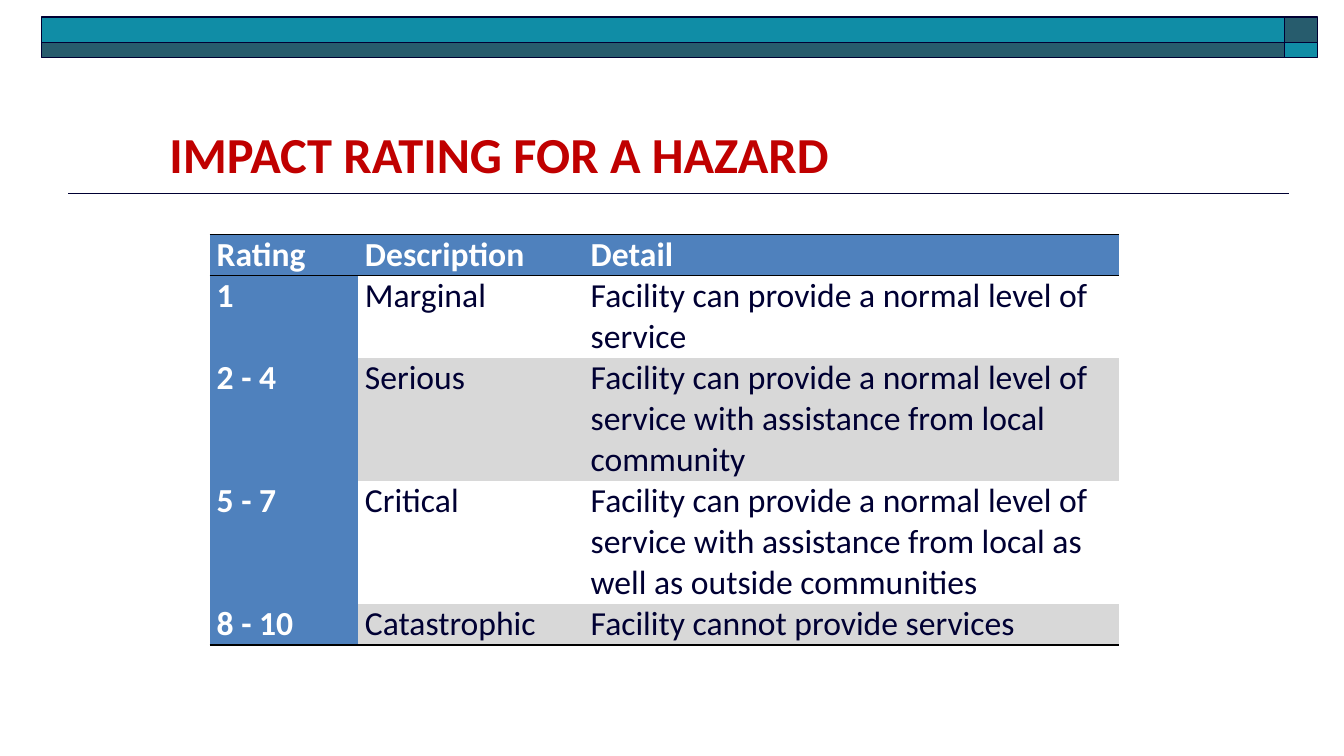
from dataclasses import dataclass

from lxml import etree
from pptx import Presentation
from pptx import util as u
from pptx.dml.color import RGBColor
from pptx.enum import shapes, text
from pptx.oxml.ns import qn
from pptx.slide import Slide
from pptx.table import _Cell as Cell

PX = u.Inches(1) // 100
FONT = "Calibri"
NAVY = RGBColor(0x00, 0x00, 0x33)
TEAL = RGBColor(0x10, 0x8D, 0xA6)
DARK = RGBColor(0x27, 0x5C, 0x6D)
RED = RGBColor(0xC0, 0x00, 0x00)
BLUE = RGBColor(0x4F, 0x81, 0xBD)
GREY = RGBColor(0xD8, 0xD8, 0xD8)
WHITE = RGBColor(0xFF, 0xFF, 0xFF)
BLACK = RGBColor(0x00, 0x00, 0x00)


@dataclass
class Bar:
    left: int
    top: int
    width: int
    height: int
    fill: RGBColor


@dataclass
class Level:
    rating: str
    name: str
    detail: str
    lines: int


BARS = [
    Bar(1274, 17, 33, 25, DARK),
    Bar(41, 17, 1233, 25, TEAL),
    Bar(41, 42, 1233, 15, DARK),
    Bar(1274, 42, 33, 15, TEAL),
]
NORMAL = "Facility can provide a normal level of service"
LEVELS = [
    Level("Rating", "Description", "Detail", 1),
    Level("1", "Marginal", NORMAL, 2),
    Level("2 - 4", "Serious", f"{NORMAL} with assistance from local community", 3),
    Level("5 - 7", "Critical",
          f"{NORMAL} with assistance from local as well as outside communities", 3),
    Level("8 - 10", "Catastrophic", "Facility cannot provide services", 1),
]
COLS = [147, 224, 531]
LINE = 40


def draw_bar(slide: Slide, bar: Bar) -> None:
    box = slide.shapes.add_shape(
        shapes.MSO_SHAPE.RECTANGLE,
        bar.left * PX, bar.top * PX, bar.width * PX, bar.height * PX)
    box.shadow.inherit = False
    box.fill.solid()
    box.fill.fore_color.rgb = bar.fill
    box.line.color.rgb = NAVY
    box.line.width = u.Pt(1)


def draw_rule(slide: Slide) -> None:
    rule = slide.shapes.add_connector(
        shapes.MSO_CONNECTOR.STRAIGHT, 1278 * PX, 192 * PX, 67 * PX, 192 * PX)
    rule.line.color.rgb = NAVY
    rule.line.width = u.Pt(1)
    etree.SubElement(rule._element.spPr, qn("a:effectLst"))


def style(para, size: int, color: RGBColor, bold: bool) -> None:
    for run in para.runs:
        run.font.name = FONT
        run.font.size = u.Pt(size)
        run.font.bold = bold
        run.font.color.rgb = color


def draw_title(slide: Slide) -> None:
    title = slide.shapes.title
    title.left, title.top = 158 * PX, 117 * PX
    title.width, title.height = 808 * PX, 37 * PX
    frame = title.text_frame
    frame.text = "IMPACT RATING FOR A HAZARD"
    frame.word_wrap = True
    frame.auto_size = text.MSO_AUTO_SIZE.NONE
    frame.vertical_anchor = text.MSO_ANCHOR.TOP
    para = frame.paragraphs[0]
    para.alignment = text.PP_ALIGN.LEFT
    style(para, 36, RED, True)


def set_edge(cell: Cell, side: str, points: float) -> None:
    edge = etree.SubElement(cell._tc.get_or_add_tcPr(), qn(f"a:ln{side}"))
    edge.set("w", str(u.Pt(points)))
    if points:
        fill = etree.SubElement(edge, qn("a:solidFill"))
        etree.SubElement(fill, qn("a:srgbClr")).set("val", str(BLACK))
    else:
        etree.SubElement(edge, qn("a:noFill"))


def draw_cell(cell: Cell, words: str, row: int, col: int) -> None:
    last = len(LEVELS) - 1
    head = row == 0 or col == 0
    top = 1 if row < 2 else 0
    base = {0: 1, last: 2.25}.get(row, 0)
    for side, points in zip("LRTB", (0, 0, top, base)):
        set_edge(cell, side, points)
    if head or row % 2 == 0:
        cell.fill.solid()
        cell.fill.fore_color.rgb = BLUE if head else GREY
    else:
        cell.fill.background()
    cell.margin_left = cell.margin_right = 7 * PX
    cell.margin_top = cell.margin_bottom = 0
    cell.text_frame.text = words
    style(cell.text_frame.paragraphs[0], 24, WHITE if head else NAVY, head)


def draw_table(slide: Slide) -> None:
    high = LINE * sum(level.lines for level in LEVELS)
    table = slide.shapes.add_table(
        len(LEVELS), len(COLS), 208 * PX, 233 * PX, sum(COLS) * PX, high * PX).table
    table.horz_banding = False
    for col, width in enumerate(COLS):
        table.columns[col].width = width * PX
    for row, level in enumerate(LEVELS):
        table.rows[row].height = level.lines * LINE * PX
        for col, words in enumerate((level.rating, level.name, level.detail)):
            draw_cell(table.cell(row, col), words, row, col)


def main() -> None:
    deck = Presentation()
    deck.slide_width, deck.slide_height = 1333 * PX, 750 * PX
    slide = deck.slides.add_slide(deck.slide_layouts[5])
    draw_rule(slide)
    for bar in BARS:
        draw_bar(slide, bar)
    draw_title(slide)
    draw_table(slide)
    deck.save("out.pptx")


if __name__ == "__main__":
    main()
